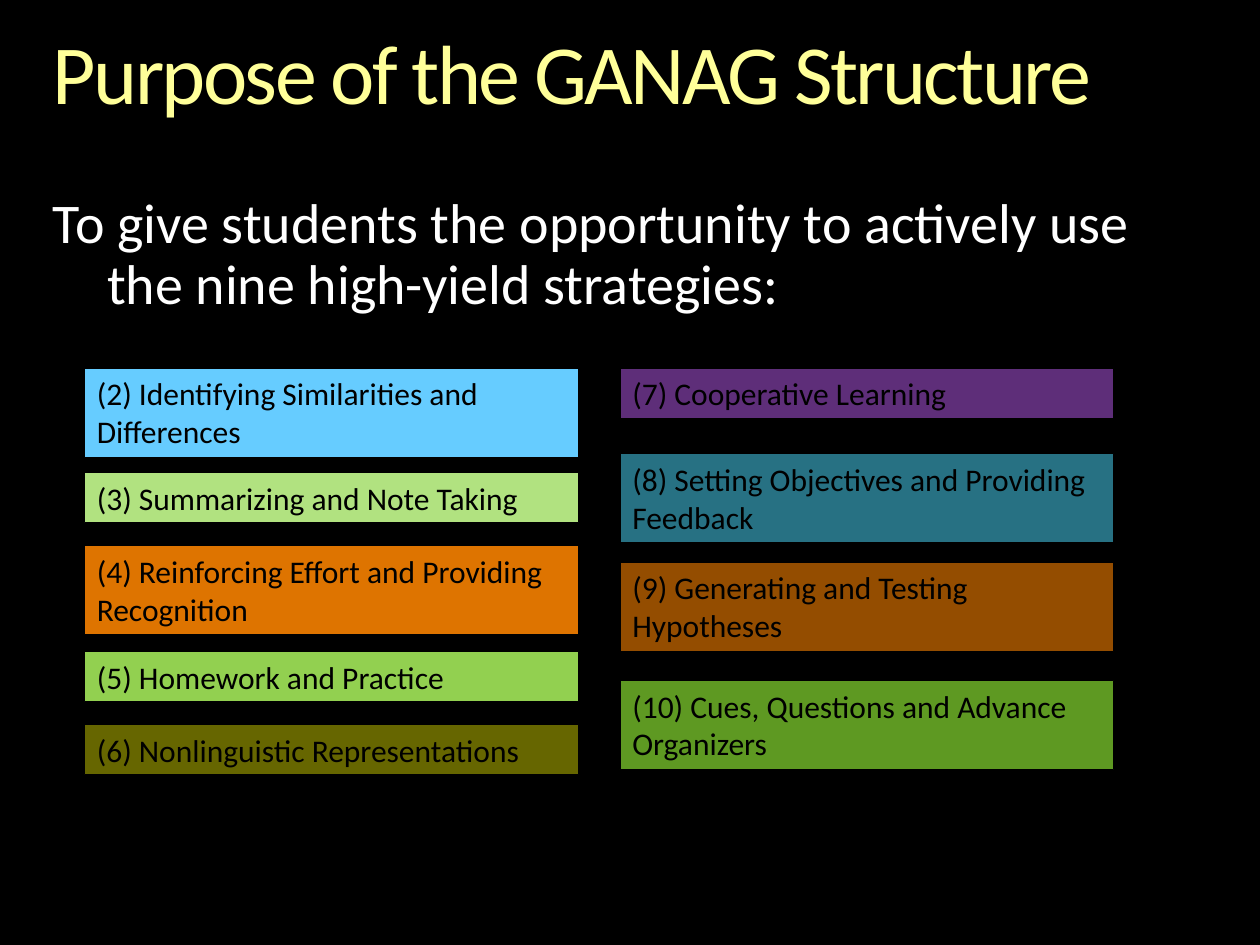
from pptx import Presentation
from pptx.dml.color import RGBColor
from pptx.enum.shapes import MSO_SHAPE as Shape
from pptx.enum.text import MSO_ANCHOR as Anchor, MSO_AUTO_SIZE as AutoSize, PP_ALIGN as Align
from pptx.oxml.xmlchemy import OxmlElement
from pptx.util import Inches, Pt

BLACK = RGBColor(0x00, 0x00, 0x00)
WHITE = RGBColor(0xFF, 0xFF, 0xFF)
YELLOW = RGBColor(0xFF, 0xFF, 0x99)
SKY = RGBColor(0x66, 0xCC, 0xFF)
PALE_GREEN = RGBColor(0xB1, 0xE2, 0x80)
ORANGE = RGBColor(0xDE, 0x74, 0x00)
LIME = RGBColor(0x92, 0xD0, 0x50)
OLIVE = RGBColor(0x66, 0x66, 0x00)
PURPLE = RGBColor(0x5E, 0x2E, 0x79)
TEAL = RGBColor(0x27, 0x71, 0x83)
BROWN = RGBColor(0x94, 0x4D, 0x00)
GREEN = RGBColor(0x5E, 0x99, 0x22)

ONE_LINE, TWO_LINES = 0.4, 0.71
BOX_WIDTH = 3.92

# Each column: left edge, then (top, height, fill, strategy)
COLUMNS = [
    (0.67, [
        (2.92, TWO_LINES, SKY, "(2) Identifying Similarities and Differences"),
        (3.75, ONE_LINE, PALE_GREEN, "(3) Summarizing and Note Taking"),
        (4.33, TWO_LINES, ORANGE, "(4) Reinforcing Effort and Providing Recognition"),
        (5.17, ONE_LINE, LIME, "(5) Homework and Practice"),
        (5.75, ONE_LINE, OLIVE, "(6) Nonlinguistic Representations"),
    ]),
    (4.92, [
        (2.92, ONE_LINE, PURPLE, "(7) Cooperative Learning"),
        (3.6, TWO_LINES, TEAL, "(8) Setting Objectives and Providing Feedback"),
        (4.46, TWO_LINES, BROWN, "(9) Generating and Testing Hypotheses"),
        (5.4, TWO_LINES, GREEN, "(10) Cues, Questions and Advance Organizers"),
    ]),
]


def style_text(para, size, color):
    para.alignment = Align.LEFT
    for span in para.runs:
        span.font.name = "Calibri"
        span.font.size = Pt(size)
        span.font.color.rgb = color


def fill_placeholder(box, top, height, text, size, color):
    """Place a template placeholder, write its text and return the paragraph."""
    box.left, box.top = Inches(0.42), Inches(top)
    box.width, box.height = Inches(9.17), Inches(height)
    frame = box.text_frame
    frame.margin_left = frame.margin_right = frame.margin_top = frame.margin_bottom = 0
    frame.vertical_anchor = Anchor.TOP
    frame.auto_size = AutoSize.NONE
    frame.word_wrap = True
    frame.text = text
    para = frame.paragraphs[0]
    para.line_spacing = 0.9
    para.space_before = Pt(0)
    style_text(para, size, color)
    return para


deck = Presentation()
deck.slide_width, deck.slide_height = Inches(10), Inches(7.5)
page = deck.slides.add_slide(deck.slide_layouts[1])
page.background.fill.solid()
page.background.fill.fore_color.rgb = BLACK

title = fill_placeholder(page.shapes.title, 0.25, 0.73,
                         "Purpose of the GANAG Structure", 48, YELLOW)
title.runs[0].font._element.set("spc", "-150")

intro = fill_placeholder(
    page.placeholders[1], 1.55, 2.42,
    "To give students the opportunity to actively use the nine high-yield strategies:",
    32, WHITE)
intro_format = intro._p.get_or_add_pPr()
intro_format.set("marL", str(Inches(0.43)))
intro_format.set("indent", str(Inches(-0.43)))
intro_format.append(OxmlElement("a:buNone"))

for left, strategies in COLUMNS:
    for top, height, color, strategy in strategies:
        box = page.shapes.add_shape(Shape.RECTANGLE, Inches(left), Inches(top),
                                    Inches(BOX_WIDTH), Inches(height))
        box.shadow.inherit = False
        box.fill.solid()
        box.fill.fore_color.rgb = color
        box.line.color.rgb = BLACK
        box.line.width = Pt(0.75)
        frame = box.text_frame
        frame.word_wrap = True
        frame.auto_size = AutoSize.SHAPE_TO_FIT_TEXT
        frame.vertical_anchor = Anchor.TOP
        frame.text = strategy
        style_text(frame.paragraphs[0], 18, BLACK)

deck.save("out.pptx")
